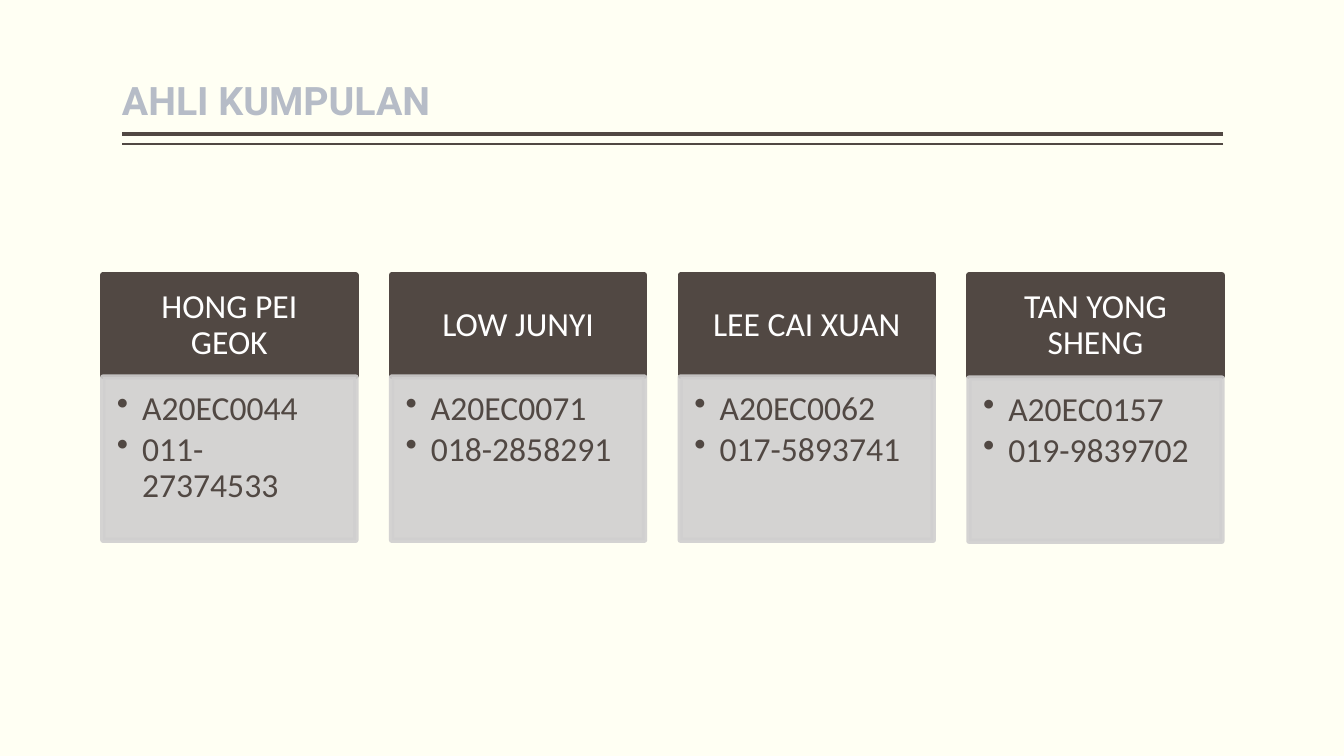
from lxml import etree
from pptx import Presentation
from pptx.dml.color import RGBColor
from pptx.enum.shapes import MSO_CONNECTOR, MSO_SHAPE
from pptx.enum.text import MSO_ANCHOR, PP_ALIGN
from pptx.oxml.ns import qn
from pptx.util import Inches, Pt

CREAM = RGBColor(0xFF, 0xFF, 0xF3)
BROWN = RGBColor(0x51, 0x48, 0x43)
GREY = RGBColor(0xD0, 0xCF, 0xCF)
BLUE_GREY = RGBColor(0xB6, 0xBC, 0xC7)
WHITE = RGBColor(0xFF, 0xFF, 0xFF)
RECTANGLE, STRAIGHT = MSO_SHAPE.RECTANGLE, MSO_CONNECTOR.STRAIGHT
TOP, MIDDLE, BOTTOM = MSO_ANCHOR.TOP, MSO_ANCHOR.MIDDLE, MSO_ANCHOR.BOTTOM
LEFT, CENTER = PP_ALIGN.LEFT, PP_ALIGN.CENTER

MEMBERS = [
    ("HONG PEI GEOK", "A20EC0044", "011-27374533", 3.74),
    ("LOW JUNYI", "A20EC0071", "018-2858291", 3.74),
    ("LEE CAI XUAN", "A20EC0062", "017-5893741", 3.74),
    ("TAN YONG SHENG", "A20EC0157", "019-9839702", 3.75),
]
FIRST_LEFT, LAST_LEFT, CARD_WIDTH = 1.02, 9.61, 2.51
PITCH = (LAST_LEFT - FIRST_LEFT) / (len(MEMBERS) - 1)

TITLE = {"size": Pt(28), "name": "Roboto", "bold": True}
BODY = {"size": Pt(24), "name": "Calibri"}


def write_text(box, lines, anchor, margins, font, color, align, space_after):
    frame = box.text_frame
    frame.word_wrap = True
    frame.vertical_anchor = anchor
    for side, margin in zip(("left", "top", "right", "bottom"), margins):
        setattr(frame, f"margin_{side}", Inches(margin))
    for index, line in enumerate(lines):
        para = frame.paragraphs[0] if index == 0 else frame.add_paragraph()
        para.alignment = align
        para.line_spacing = 0.9
        para.space_after = Pt(space_after)
        span = para.add_run()
        span.text = line
        for attribute, value in font.items():
            setattr(span.font, attribute, value)
        span.font.color.rgb = color


def add_panel(left, top, height, color):
    panel = page.shapes.add_shape(
        RECTANGLE, Inches(left), Inches(top), Inches(CARD_WIDTH), Inches(height))
    panel.shadow.inherit = False
    panel.fill.solid()
    panel.fill.fore_color.rgb = color
    panel.line.color.rgb = color
    panel.line.width = Pt(3.78)
    return panel


deck = Presentation()
deck.slide_width, deck.slide_height = Inches(13.33), Inches(7.5)
page = deck.slides.add_slide(deck.slide_layouts[6])
page.background.fill.solid()
page.background.fill.fore_color.rgb = CREAM

# Double rule under the title
for y, width in ((1.33, 3), (1.43, 1)):
    rule = page.shapes.add_connector(
        STRAIGHT, Inches(12.13), Inches(y), Inches(1.21), Inches(y))
    rule.line.color.rgb = BROWN
    rule.line.width = Pt(width)
    etree.SubElement(rule._element.spPr, qn("a:effectLst"))

# Title
title = page.shapes.add_textbox(Inches(1.21), Inches(0.08), Inches(10.92), Inches(1.2))
write_text(title, ["AHLI KUMPULAN"], BOTTOM, (0, 0.05, 0, 0.05),
           TITLE, BLUE_GREY, LEFT, 0)

# Member cards
for column, (name, matric, phone, details_top) in enumerate(MEMBERS):
    left = FIRST_LEFT + column * PITCH
    header = add_panel(left, 2.73, 1, BROWN)
    write_text(header, [name], MIDDLE, (0.19, 0.11, 0.19, 0.11),
               BODY, WHITE, CENTER, 0)

    details = add_panel(left, details_top, 1.62, GREY)
    write_text(details, [matric, phone], TOP, (0.14, 0.14, 0.19, 0.21),
               BODY, BROWN, LEFT, 3.6)

    # 90 % opacity on fill and outline
    for color in details._element.spPr.iter(qn("a:srgbClr")):
        etree.SubElement(color, qn("a:alpha"), val="90000")

    # Hanging bullets
    for para in details.text_frame.paragraphs:
        properties = para._p.get_or_add_pPr()
        properties.set("marL", str(Inches(0.25)))
        properties.set("indent", str(Inches(-0.25)))
        etree.SubElement(properties, qn("a:buChar"), char="•")

deck.save("out.pptx")
